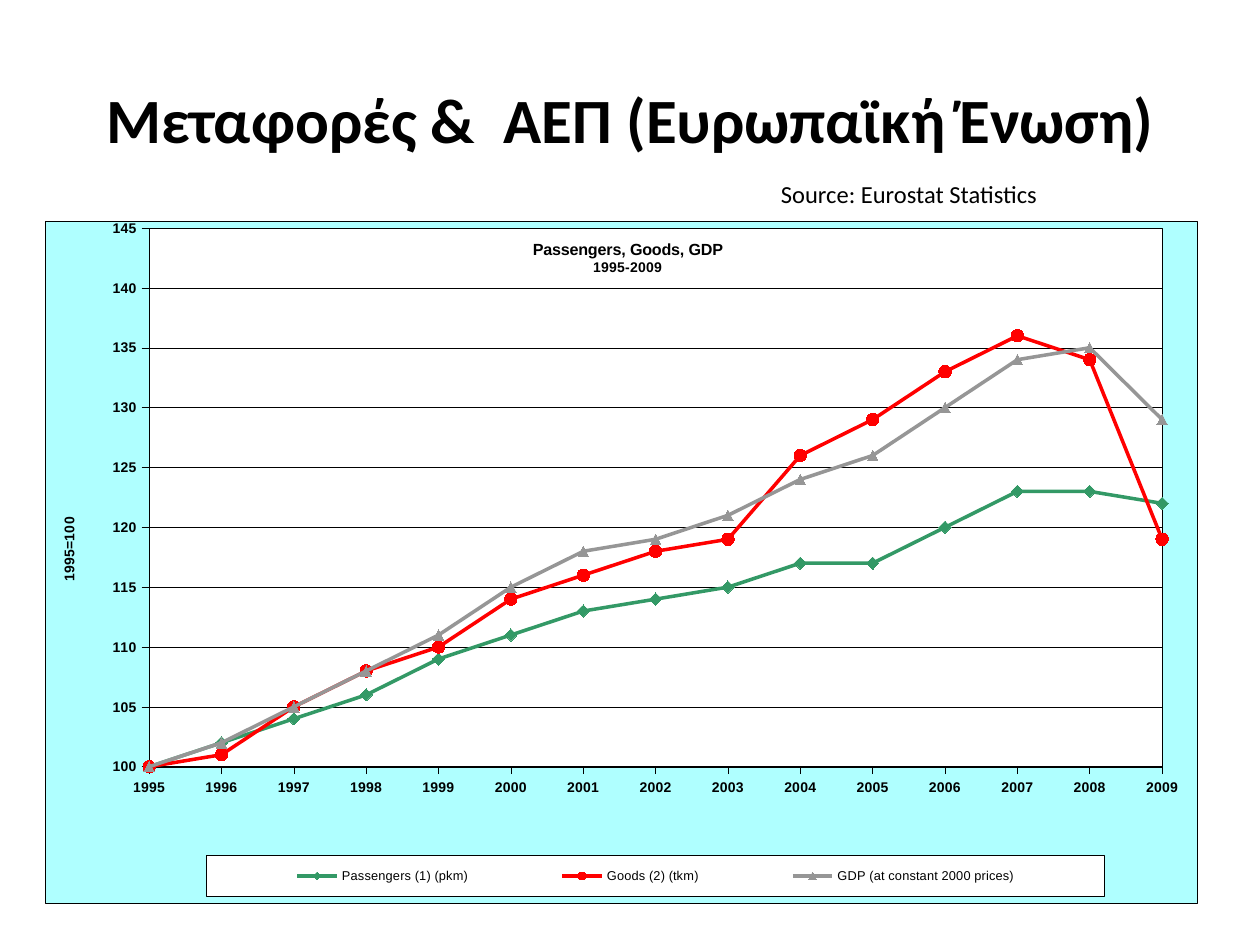
import pptx
import pptx.util
import pptx.oxml
import pptx.chart.data
import pptx.dml.color
import pptx.enum.chart
import pptx.enum.text
import pptx.oxml.ns

Pt = pptx.util.Pt
RGB = pptx.dml.color.RGBColor
Mark = pptx.enum.chart.XL_MARKER_STYLE
Tick = pptx.enum.chart.XL_TICK_MARK
Align = pptx.enum.text.PP_ALIGN
Anchor = pptx.enum.text.MSO_ANCHOR
qn = pptx.oxml.ns.qn

BLACK = RGB(0, 0, 0)
WHITE = RGB(255, 255, 255)
AQUA = RGB(0xAF, 0xFF, 0xFF)
GREEN = RGB(0x33, 0x99, 0x66)
RED = RGB(255, 0, 0)
GREY = RGB(0x96, 0x96, 0x96)

WIDE, HIGH = pptx.util.Inches(10), pptx.util.Inches(7.5)
HAIR = Pt(0.25)

YEARS = [str(year) for year in range(1995, 2010)]
SERIES = [
    ("Passengers (1) (pkm)", GREEN, Mark.DIAMOND, 7,
     [100, 102, 104, 106, 109, 111, 113, 114, 115, 117, 117, 120, 123, 123, 122]),
    ("Goods (2) (tkm)", RED, Mark.CIRCLE, 7,
     [100, 101, 105, 108, 110, 114, 116, 118, 119, 126, 129, 133, 136, 134, 119]),
    ("GDP (at constant 2000 prices)", GREY, Mark.TRIANGLE, 6,
     [100, 102, 105, 108, 111, 115, 118, 119, 121, 124, 126, 130, 134, 135, 129]),
]


def scale(box):
    """Turn shares of the slide's size into lengths."""
    x, y, w, h = box
    return [int(n) for n in (x * WIDE, y * HIGH, w * WIDE, h * HIGH)]


def style(font, size, bold=False, name="Arial"):
    font.size, font.bold, font.name = Pt(size), bold, name
    font.color.rgb = BLACK


def label(slide, box, text, size, bold=False, align=Align.LEFT, wrap=True):
    frame = slide.shapes.add_textbox(*scale(box)).text_frame
    frame.text = text
    frame.word_wrap = wrap
    frame.vertical_anchor = Anchor.MIDDLE
    para = frame.paragraphs[0]
    para.alignment = align
    style(para.runs[0].font, size, bold, "Calibri")


def make(xml):
    """Parse one chart element, given without its namespaces."""
    head, tail = xml.split(">", 1)
    close = "/" if head.endswith("/") else ""
    return pptx.oxml.parse_xml(
        f'{head.rstrip("/")} {pptx.oxml.ns.nsdecls("c", "a")}{close}>{tail}')


def panel(fill):
    """Shape properties for a filled chart part with a hairline border."""
    return make(
        f'<c:spPr><a:solidFill><a:srgbClr val="{fill}"/></a:solidFill>'
        f'<a:ln w="{int(HAIR)}"><a:solidFill><a:srgbClr val="{BLACK}"/>'
        '</a:solidFill></a:ln></c:spPr>')


def layout(node, after, x, y, w=None, h=None, inner=False):
    """Fix a chart part's place, in shares of the chart's size."""
    for old in node.findall(qn("c:layout")):
        node.remove(old)
    parts = '<c:layoutTarget val="inner"/>' if inner else ""
    parts += '<c:xMode val="edge"/><c:yMode val="edge"/>'
    for tag, val in zip("xywh", (x, y, w, h)):
        if val is not None:
            parts += f'<c:{tag} val="{val}"/>'
    new = make(f'<c:layout><c:manualLayout>{parts}</c:manualLayout></c:layout>')
    if after:
        node.find(qn(after)).addnext(new)
    else:
        node.insert(0, new)


def heading(title, texts, sizes, x, y):
    title.text_frame.text = "\n".join(texts)
    for para, size in zip(title.text_frame.paragraphs, sizes):
        para.alignment = Align.CENTER
        style(para.runs[0].font, size, True)
    layout(title._element, "c:tx", x, y)


def axes(chart):
    for axis in (chart.category_axis, chart.value_axis):
        style(axis.tick_labels.font, 8, True)
        axis.major_tick_mark = Tick.OUTSIDE
        axis.minor_tick_mark = Tick.NONE
        axis.format.line.color.rgb = BLACK
        axis.format.line.width = HAIR
    chart.category_axis.has_major_gridlines = False
    value = chart.value_axis
    value.minimum_scale, value.maximum_scale = 100, 145
    value.major_unit = 5
    value.tick_labels.number_format = "0"
    value.tick_labels.number_format_is_linked = False
    value.has_major_gridlines = True
    grid = value.major_gridlines.format.line
    grid.color.rgb, grid.width = BLACK, HAIR
    cross = value._element.find(qn("c:crosses"))
    cross.addnext(make('<c:crossBetween val="midCat"/>'))
    title = value.axis_title
    heading(title, ["1995=100"], [8], 0.01, 0.43)
    body = next(title._element.iter(qn("a:bodyPr")))
    body.set("rot", "-5400000")
    body.set("vert", "horz")


def lines(plot):
    plot.vary_by_categories = False
    for line, (_, color, mark, size, _) in zip(plot.series, SERIES):
        line.smooth = False
        line.format.line.color.rgb = color
        line.format.line.width = Pt(2)
        line.marker.style, line.marker.size = mark, size
        line.marker.format.fill.solid()
        line.marker.format.fill.fore_color.rgb = color
        line.marker.format.line.color.rgb = color


def key(chart):
    """Legend in a bordered box along the bottom."""
    chart.has_legend = True
    legend = chart.legend
    legend.position = pptx.enum.chart.XL_LEGEND_POSITION.BOTTOM
    legend.include_in_layout = False
    style(legend.font, 7.3)
    node = legend._element
    layout(node, "c:legendPos", 0.14, 0.93, 0.78, 0.06)
    node.find(qn("c:overlay")).addnext(panel(WHITE))


def graph(slide, box):
    data = pptx.chart.data.CategoryChartData(number_format="0")
    data.categories = YEARS
    for name, *_, vals in SERIES:
        data.add_series(name, vals)
    kind = pptx.enum.chart.XL_CHART_TYPE.LINE_MARKERS
    chart = slide.shapes.add_chart(kind, *scale(box), data).chart
    style(chart.font, 12)
    chart.has_title = True
    heading(chart.chart_title, ["Passengers, Goods, GDP", "1995-2009"],
            [9.2, 8], 0.42, 0.02)
    axes(chart)
    lines(chart.plots[0])
    key(chart)
    root = chart._chartSpace.find(qn("c:chart"))
    area = root.find(qn("c:plotArea"))
    layout(area, None, 0.09, 0.01, 0.88, 0.79, inner=True)
    area.append(panel(WHITE))
    root.addnext(panel(AQUA))


def main():
    deck = pptx.Presentation()
    deck.slide_width, deck.slide_height = WIDE, HIGH
    slide = deck.slides.add_slide(deck.slide_layouts[6])
    label(slide, (0.05, 0.04, 0.9, 0.17),
          "Μεταφορές &  AΕΠ (Ευρωπαϊκή Ένωση)", 36, True, Align.CENTER)
    graph(slide, (0.036, 0.233, 0.914, 0.723))
    label(slide, (0.61, 0.183, 0.227, 0.045),
          "Source: Εurostat Statistics", 14, wrap=False)
    deck.save("out.pptx")


if __name__ == "__main__":
    main()
